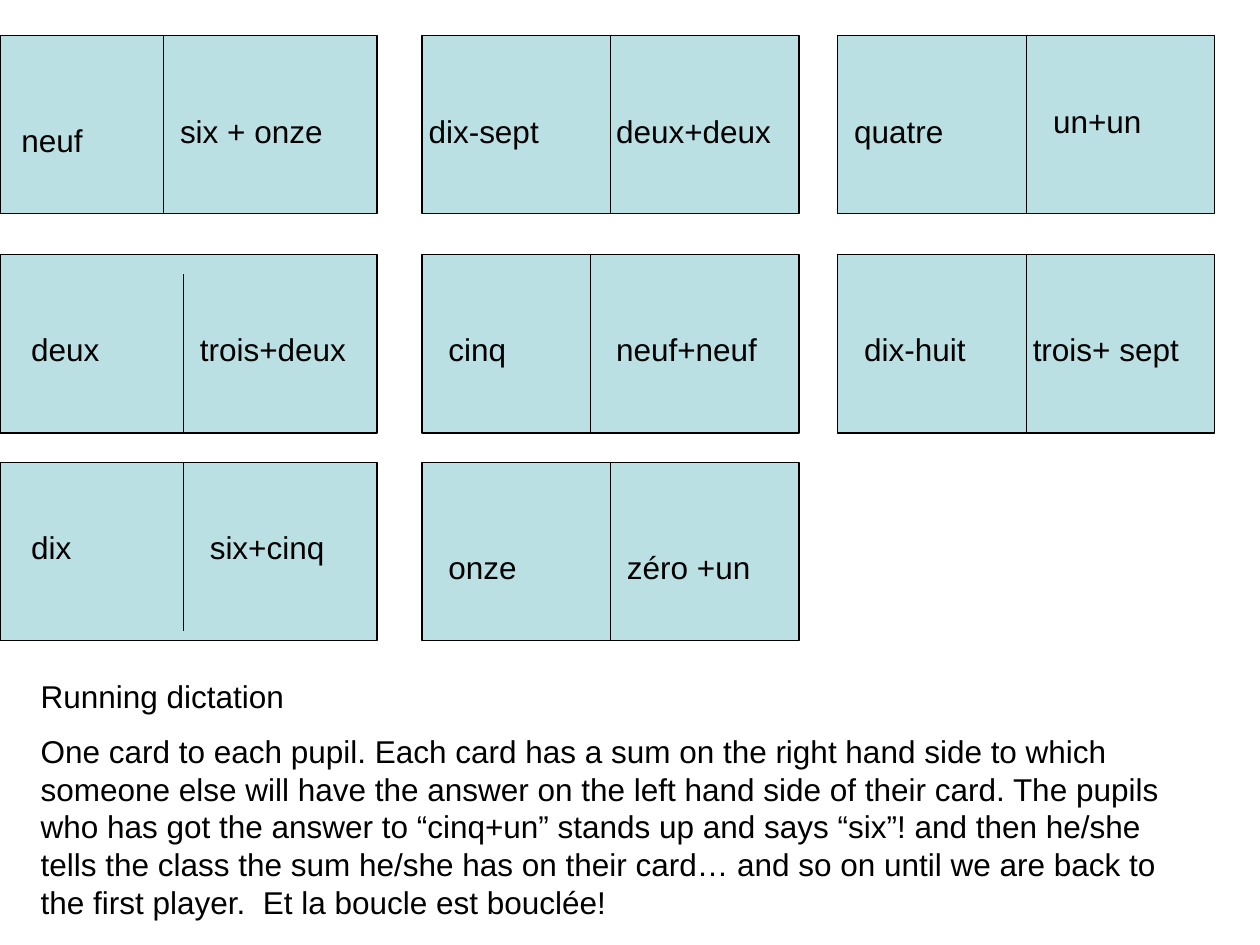
from lxml.etree import SubElement
from pptx import Presentation
from pptx.dml.color import RGBColor
from pptx.enum.shapes import MSO_CONNECTOR, MSO_SHAPE
from pptx.enum.text import MSO_AUTO_SIZE
from pptx.oxml.ns import qn
from pptx.util import Cm, Pt

COLORS = {"card": "BBE0E3", "ink": "000000"}
CARD_W, CARD_H = 7.6, 3.6
COLS = [0, 8.51, 16.89]
ROWS = [0.71, 5.13, 9.32]

# Column, row, divider (x, top, bottom within the card; None is the middle),
# then answer and sum as (text, x, y, width) within the card
CARDS = [
    (0, 0, (3.3, 0, CARD_H), ("neuf", 0.3, 1.6, 3), ("six + onze", 3.5, 1.42, 3.8)),
    (1, 0, None, ("dix-sept", 0, 1.42, 3.6), ("deux+deux", 3.78, 1.42, 4)),
    (2, 0, None, ("quatre", 0.2, 1.42, 3.2), ("un+un", 4.21, 1.22, 3.2)),
    (0, 1, (3.7, 0.4, CARD_H), ("deux", 0.5, 1.4, 3.6), ("trois+deux", 3.9, 1.4, 4)),
    (1, 1, (3.4, 0, CARD_H), ("cinq", 0.4, 1.4, 3.2), ("neuf+neuf", 3.78, 1.4, 3.6)),
    (2, 1, None, ("dix-huit", 0.4, 1.4, 2.6), ("trois+ sept", 3.8, 1.4, 3.8)),
    (0, 2, (3.7, 0, 3.4), ("dix", 0.5, 1.2, 3), ("six+cinq", 4.1, 1.2, 3.2)),
    (1, 2, None, ("onze", 0.4, 1.6, 3), ("zéro +un", 4, 1.6, 3.4)),
]

RULES = [
    "Running dictation",
    "One card to each pupil. Each card has a sum on the right hand side to which "
    "someone else will have the answer on the left hand side of their card. The "
    "pupils who has got the answer to “cinq+un” stands up and says “six”! and then "
    "he/she  tells the class the sum he/she has on their card… and so on until we "
    "are back to the first player.  Et la boucle est bouclée!",
]


class Deck:
    font, size, line, inset = "Arial", Pt(18), Pt(0.75), Cm(0.13)

    def __init__(self, slide):
        self.s = slide

    def color(self, name):
        return RGBColor.from_string(COLORS[name])

    def outline(self, sp):
        sp.line.color.rgb = self.color("ink")
        sp.line.width = self.line

    def card(self, x, y):
        sp = self.s.shapes.add_shape(
            MSO_SHAPE.RECTANGLE, Cm(x), Cm(y), Cm(CARD_W), Cm(CARD_H))
        sp.shadow.inherit = False
        sp.fill.solid()
        sp.fill.fore_color.rgb = self.color("card")
        self.outline(sp)
        return sp

    def divider(self, x, top, bottom, card=None):
        sp = self.s.shapes.add_connector(
            MSO_CONNECTOR.STRAIGHT, Cm(x), Cm(top), Cm(x), Cm(bottom))
        if card is not None:
            sp.begin_connect(card, 0)
            sp.end_connect(card, 2)
        self.outline(sp)
        SubElement(sp._element.spPr, qn("a:effectLst"))

    def text(self, paragraphs, x, y, w, h=0.97):
        sp = self.s.shapes.add_textbox(Cm(x), Cm(y), Cm(w), Cm(h))
        tf = sp.text_frame
        tf.word_wrap = True
        tf.auto_size = MSO_AUTO_SIZE.SHAPE_TO_FIT_TEXT
        tf.margin_left = tf.margin_right = self.inset
        tf.margin_top = tf.margin_bottom = self.inset
        for i, line in enumerate(paragraphs):
            p = tf.add_paragraph() if i else tf.paragraphs[0]
            p.text = line
            p.space_before = Pt(10)
            p.font.name = self.font
            p.font.size = self.size
            p.font.color.rgb = self.color("ink")


def main():
    prs = Presentation()
    prs.slide_width, prs.slide_height = Cm(25.4), Cm(19.05)
    deck = Deck(prs.slides.add_slide(prs.slide_layouts[6]))

    # Cards, each with a divider, an answer and a sum
    for col, row, split, *labels in CARDS:
        x, y = COLS[col], ROWS[row]
        card = deck.card(x, y)
        if split is None:
            deck.divider(x + CARD_W / 2, y, y + CARD_H, card)
        else:
            dx, top, bottom = split
            deck.divider(x + dx, y + top, y + bottom)
        for label, dx, dy, w in labels:
            deck.text([label], x + dx, y + dy, w)

    # Rules of the game
    deck.text(RULES, 0.69, 13.51, 23, 5.05)

    prs.save("out.pptx")


if __name__ == "__main__":
    main()
